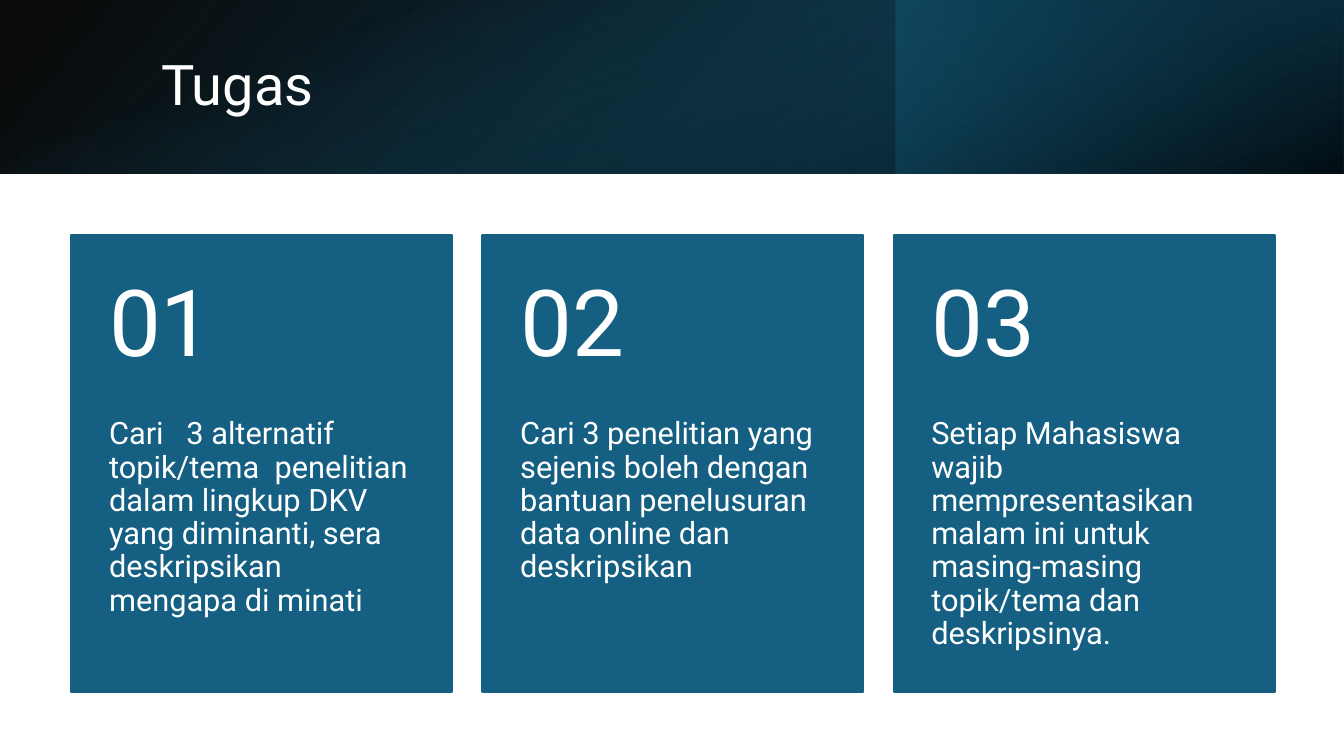
from lxml.etree import SubElement as Sub
from pptx import Presentation as Deck
from pptx.dml.color import RGBColor as Rgb
from pptx.enum.shapes import MSO_SHAPE as Kind
from pptx.enum.text import MSO_ANCHOR as Anchor
from pptx.oxml.ns import qn
from pptx.util import Cm, Pt

FONT = "Roboto"
HUES = {
    "white": "FFFFFF",
    "black": "000000",
    "blue": "156082",
    "deep": "104862",
    "navy": "0B3041",
}
WIDE, HIGH = 33.87, 19.05
BAND = 4.37
TASKS = [
    "Cari   3 alternatif  topik/tema  penelitian dalam lingkup DKV yang "
    "diminanti, sera deskripsikan mengapa di minati",
    "Cari 3 penelitian yang sejenis boleh dengan bantuan penelusuran data "
    "online dan deskripsikan",
    "Setiap Mahasiswa wajib mempresentasikan malam ini untuk masing-masing "
    "topik/tema dan deskripsinya.",
]


def hue(name):
    return Rgb.from_string(HUES[name])


def add_rect(slide, left, top, width, height):
    rect = slide.shapes.add_shape(
        Kind.RECTANGLE, Cm(left), Cm(top), Cm(width), Cm(height))
    rect.shadow.inherit = False
    return rect


def add_fade(slide, box, stops, angle, turn=0):
    """Add a borderless two-stop gradient; a stop is (place, colour, opacity %)."""
    rect = add_rect(slide, *box)
    rect.rotation = turn
    rect.line.fill.background()
    rect.fill.gradient()
    rect.fill.gradient_angle = 360 - angle
    for stop, (place, name, _) in zip(rect.fill.gradient_stops, stops):
        stop.position = place / 100
        stop.color.rgb = hue(name)
    tints = rect.fill._xPr.iter(qn("a:srgbClr"))
    for tint, (_, _, alpha) in zip(tints, stops):
        Sub(tint, qn("a:alpha")).set("val", str(alpha * 1000))
    return rect


def add_text(slide, box, text, size, pads, anchor=Anchor.MIDDLE):
    """Add white text; pads are the left/right, top and bottom insets."""
    frame = slide.shapes.add_textbox(*map(Cm, box)).text_frame
    frame.word_wrap = True
    frame.vertical_anchor = anchor
    side, above, below = map(Cm, pads)
    frame.margin_left = frame.margin_right = side
    frame.margin_top, frame.margin_bottom = above, below
    para = frame.paragraphs[0]
    para.line_spacing = 0.9
    run = para.add_run()
    run.text = text
    run.font.name = FONT
    run.font.size = Pt(size)
    run.font.color.rgb = hue("white")


def add_band(slide):
    base = add_fade(slide, (0, 0, WIDE, BAND),
                    [(0, "black", 96), (100, "deep", 100)], 140)
    base._element.spPr.xfrm.set("flipH", "1")
    third = WIDE / 3
    add_fade(slide, (2 * third, 0, third, BAND),
             [(19, "navy", 68), (100, "blue", 79)], 320, 180)
    shift = (WIDE - BAND) / 2
    add_fade(slide, (shift, -shift, BAND, WIDE),
             [(23, "blue", 0), (99, "black", 74)], 340, 90)


def add_card(slide, index, task):
    left, top = 1.8 + 10.36 * index, 5.92
    width, height, head = 9.6, 11.53, 4.62
    card = add_rect(slide, left, top, width, height)
    card.fill.solid()
    card.fill.fore_color.rgb = hue("blue")
    card.line.color.rgb = hue("blue")
    card.line.width = Pt(1.5)
    add_text(slide, (left, top + head, width, height - head), task, 22,
             (0.95, 0, 0.91), Anchor.TOP)
    add_text(slide, (left, top, width, head), f"{index + 1:02}", 66,
             (0.95, 0.46, 0.46))


def main():
    deck = Deck()
    deck.slide_width, deck.slide_height = Cm(WIDE), Cm(HIGH)
    slide = deck.slides.add_slide(deck.slide_layouts[6])
    add_band(slide)
    add_text(slide, (3.81, 0.97, 27.89, 2.44), "Tugas", 40,
             (0.25, 0.13, 0.13))
    for index, task in enumerate(TASKS):
        add_card(slide, index, task)
    deck.save("out.pptx")


if __name__ == "__main__":
    main()
